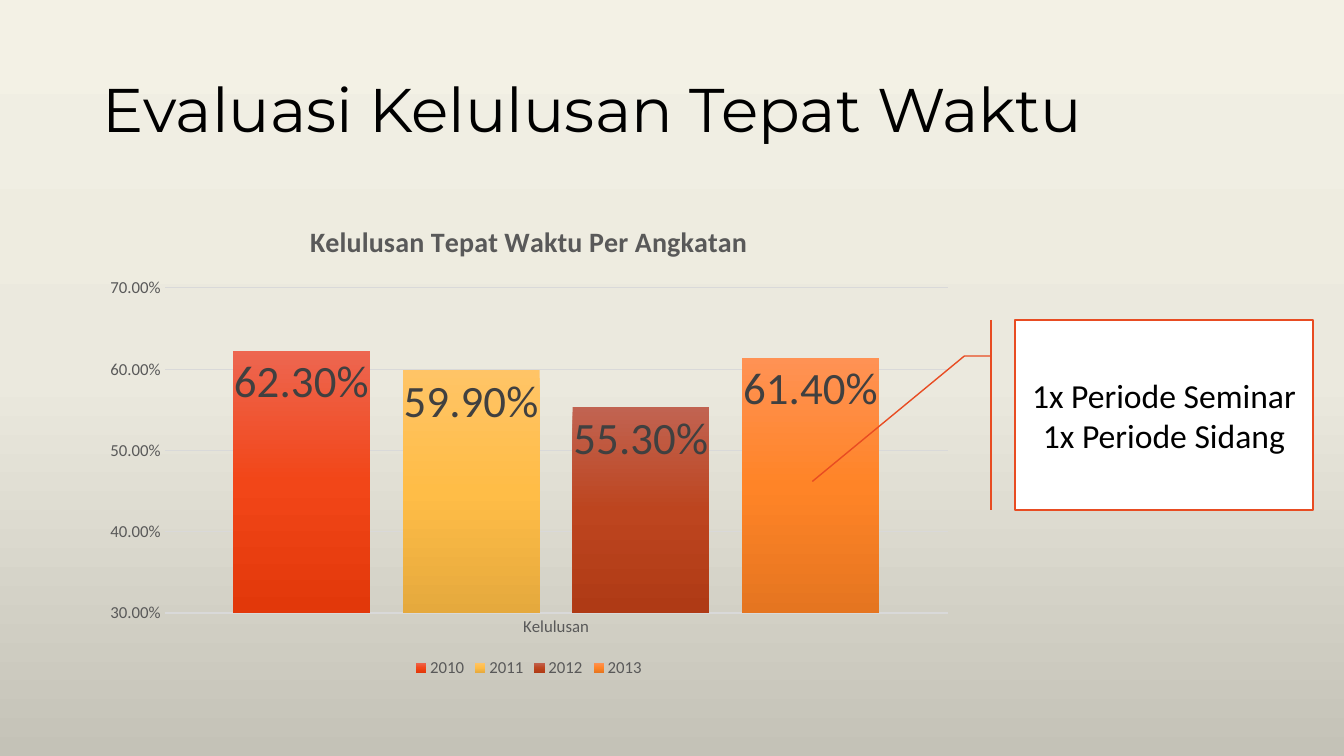
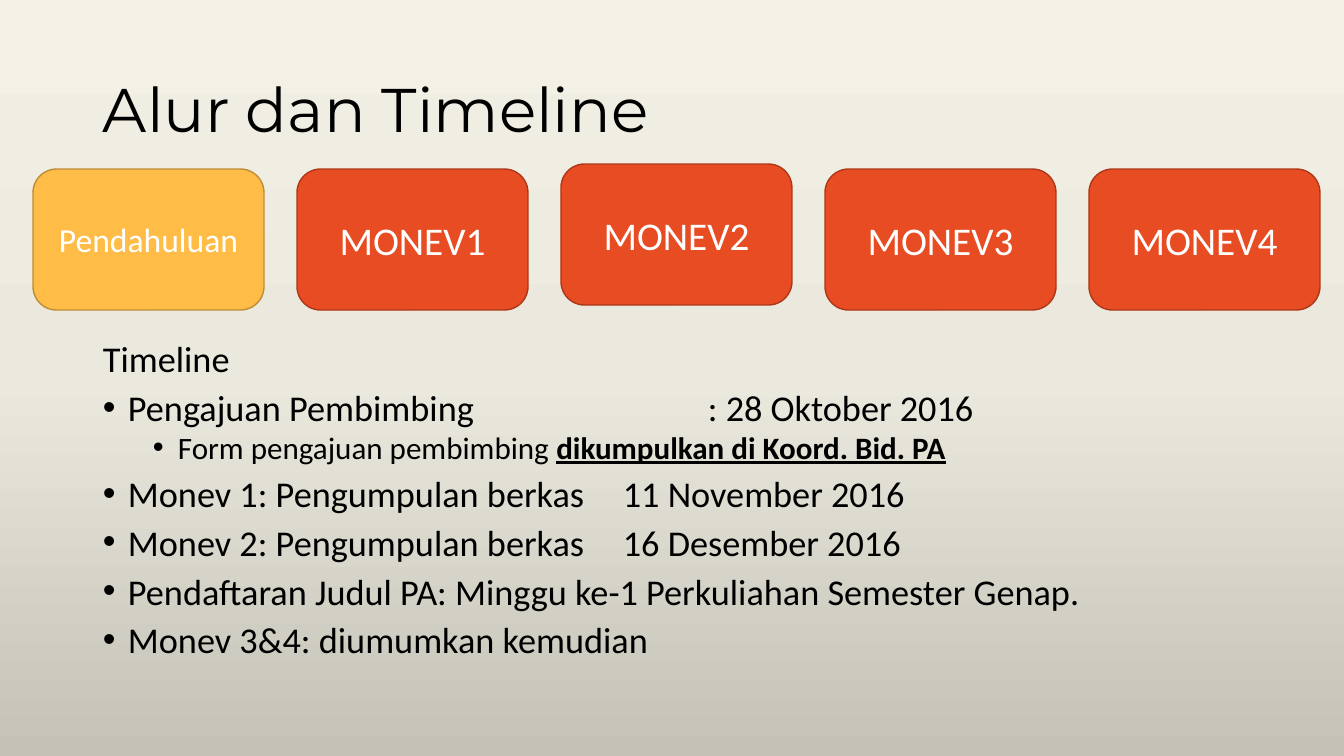
from lxml.etree import SubElement
from pptx import Presentation
from pptx.chart.data import CategoryChartData
from pptx.dml.color import RGBColor
from pptx.enum.chart import (XL_CHART_TYPE, XL_LABEL_POSITION,
                             XL_LEGEND_POSITION, XL_TICK_MARK)
from pptx.enum.shapes import MSO_SHAPE
from pptx.enum.text import MSO_ANCHOR, PP_ALIGN
from pptx.oxml import parse_xml
from pptx.oxml.ns import nsdecls, qn
from pptx.util import Emu, Pt

SCALE = 12192000 / 1344
BODY = "Calibri"
HEAD = "Montserrat"
BLACK = "000000"
WHITE = "FFFFFF"
GRAY = "595959"
GRID = "D9D9D9"
RED = "E84C22"
GOLD = "FFBD47"
BACK = ("F3F1E5", "EBE9DE", "C4C2B7")
BARS = [
    ("2010", 0.623, ("ED6650", "F24618", "E2380A")),
    ("2011", 0.599, ("FFC466", "FFBD47", "E5A93D")),
    ("2012", 0.553, ("C16351", "BD451F", "AF3A15")),
    ("2013", 0.614, ("FF9254", "FF8427", "E57520")),
]
STEPS = [
    ("Pendahuluan", 169, 24, GOLD, "BD8C35"),
    ("MONEV1", 169, 28, RED, "AC3819"),
    ("MONEV2", 164, 28, RED, "AC3819"),
    ("MONEV3", 169, 28, RED, "AC3819"),
    ("MONEV4", 169, 28, RED, "AC3819"),
]
DATES = [
    (None, "Timeline", "", None),
    (0, "Pengajuan Pembimbing\t: 28 Oktober 2016", "", 605),
    (1, "Form pengajuan pembimbing ", "dikumpulkan di Koord. Bid. PA", None),
    (0, "Monev 1: Pengumpulan berkas\t11 November 2016", "", 520),
    (0, "Monev 2: Pengumpulan berkas\t16 Desember 2016", "", 520),
    (0, "Pendaftaran Judul PA: Minggu ke-1 Perkuliahan Semester Genap.",
     "", None),
    (0, "Monev 3&4: diumumkan kemudian", "", None),
]


def px(size):
    return Emu(round(size * SCALE))


def tone(code):
    return RGBColor.from_string(code)


def style(font, size, color=BLACK, name=BODY, bold=False):
    font.size = Pt(size)
    font.name = name
    font.bold = bold
    font.color.rgb = tone(color)


def shade(root, fill, tones):
    fill.solid()
    stops = "".join(
        f'<a:gs pos="{i * 50000}"><a:srgbClr val="{code}"/></a:gs>'
        for i, code in enumerate(tones))
    grad = parse_xml(
        f'<a:gradFill {nsdecls("a")} rotWithShape="1"><a:gsLst>{stops}'
        '</a:gsLst><a:lin ang="5400000" scaled="0"/></a:gradFill>')
    flat = next(root.iter(qn("a:solidFill")))
    flat.getparent().replace(flat, grad)


def add_text(slide, left, top, width, height):
    frame = slide.shapes.add_textbox(
        px(left), px(top), px(width), px(height)).text_frame
    frame.word_wrap = True
    return frame


def add_page(deck, title):
    slide = deck.slides.add_slide(deck.slide_layouts[6])
    shade(slide.element, slide.background.fill, BACK)
    frame = add_text(slide, 93, 40, 1159, 146)
    frame.vertical_anchor = MSO_ANCHOR.MIDDLE
    frame.text = title
    line = frame.paragraphs[0]
    line.line_spacing = 0.9
    style(line.runs[0].font, 44, name=HEAD)
    return slide


def add_box(slide, kind, area, text, size, color, fill, edge):
    box = slide.shapes.add_shape(kind, *map(px, area))
    box.shadow.inherit = False
    box.fill.solid()
    box.fill.fore_color.rgb = tone(fill)
    box.line.color.rgb = tone(edge)
    box.line.width = Pt(1)
    frame = box.text_frame
    frame.word_wrap = True
    frame.vertical_anchor = MSO_ANCHOR.MIDDLE
    frame.text = text
    for line in frame.paragraphs:
        line.alignment = PP_ALIGN.CENTER
        style(line.runs[0].font, size, color)
    return box


def set_axis(axis):
    axis.major_tick_mark = XL_TICK_MARK.NONE
    axis.minor_tick_mark = XL_TICK_MARK.NONE
    style(axis.tick_labels.font, 12, GRAY)


def add_bars(slide):
    data = CategoryChartData(number_format="0.00%")
    data.categories = ["Kelulusan"]
    for name, value, _ in BARS:
        data.add_series(name, [value])
    chart = slide.shapes.add_chart(
        XL_CHART_TYPE.COLUMN_CLUSTERED,
        px(93), px(202), px(872), px(480), data).chart
    style(chart.font, 10)
    chart.has_title = True
    title = chart.chart_title.text_frame
    title.text = "Kelulusan Tepat Waktu Per Angkatan"
    style(title.paragraphs[0].runs[0].font, 20, GRAY, bold=True)
    chart.has_legend = True
    chart.legend.position = XL_LEGEND_POSITION.BOTTOM
    chart.legend.include_in_layout = False
    style(chart.legend.font, 12, GRAY)

    base = chart.category_axis
    set_axis(base)
    base.format.line.color.rgb = tone(GRID)
    base.format.line.width = Pt(1)
    scale = chart.value_axis
    set_axis(scale)
    scale.minimum_scale = 0.3
    scale.maximum_scale = 0.7
    scale.major_unit = 0.1
    scale.format.line.fill.background()
    scale.tick_labels.number_format = "0.00%"
    scale.tick_labels.number_format_is_linked = False
    grid = scale.major_gridlines.format.line
    grid.color.rgb = tone(GRID)
    grid.width = Pt(0.75)

    plot = chart.plots[0]
    plot.gap_width = 100
    plot.overlap = -24
    plot.vary_by_categories = False
    nodes = list(chart.element.iter(qn("c:ser")))
    for bar, node, (_, _, tones) in zip(plot.series, nodes, BARS):
        shade(node, bar.format.fill, tones)
        tags = bar.data_labels
        tags.show_value = True
        tags.position = XL_LABEL_POSITION.INSIDE_END
        tags.number_format = "0.00%"
        tags.number_format_is_linked = False
        style(tags.font, 32, "404040")


def add_note(slide):
    note = add_box(slide, MSO_SHAPE.LINE_CALLOUT_2_BORDER_AND_ACCENT_BAR,
                   (1015, 320, 298, 190),
                   "1x Periode Seminar\n1x Periode Sidang",
                   24, BLACK, WHITE, RED)
    for i, value in enumerate((0.19, -0.08, 0.19, -0.17, 0.85, -0.68)):
        note.adjustments[i] = value


def add_steps(slide):
    for i, (text, top, size, fill, edge) in enumerate(STEPS):
        add_box(slide, MSO_SHAPE.ROUNDED_RECTANGLE,
                (33 + i * 264, top, 231, 141), text, size, WHITE, fill, edge)


def set_mark(line, level, stop):
    line.level = level
    props = line._p.get_or_add_pPr()
    props.set("marL", str(px(25 + level * 50)))
    props.set("indent", str(px(-25)))
    SubElement(props, qn("a:buFont"), typeface="Arial")
    SubElement(props, qn("a:buChar"), char="•")
    if stop:
        tabs = SubElement(props, qn("a:tabLst"))
        SubElement(tabs, qn("a:tab"), pos=str(px(stop)), algn="l")


def add_dates(slide):
    frame = add_text(slide, 93, 340, 1159, 341)
    for i, (level, text, strong, stop) in enumerate(DATES):
        line = frame.add_paragraph() if i else frame.paragraphs[0]
        line.text = text
        if level is not None:
            set_mark(line, level, stop)
        line.line_spacing = 0.8
        if i:
            line.space_before = Pt(5 if level else 10)
        size = 22.2 if level else 25.9
        style(line.runs[0].font, size)
        if strong:
            run = line.add_run()
            run.text = strong
            style(run.font, size, bold=True)
            run.font.underline = True


def main():
    deck = Presentation()
    deck.slide_width = px(1344)
    deck.slide_height = px(756)
    first = add_page(deck, "Evaluasi Kelulusan Tepat Waktu")
    add_bars(first)
    add_note(first)
    second = add_page(deck, "Alur dan Timeline")
    add_dates(second)
    add_steps(second)
    deck.save("out.pptx")


if __name__ == "__main__":
    main()
